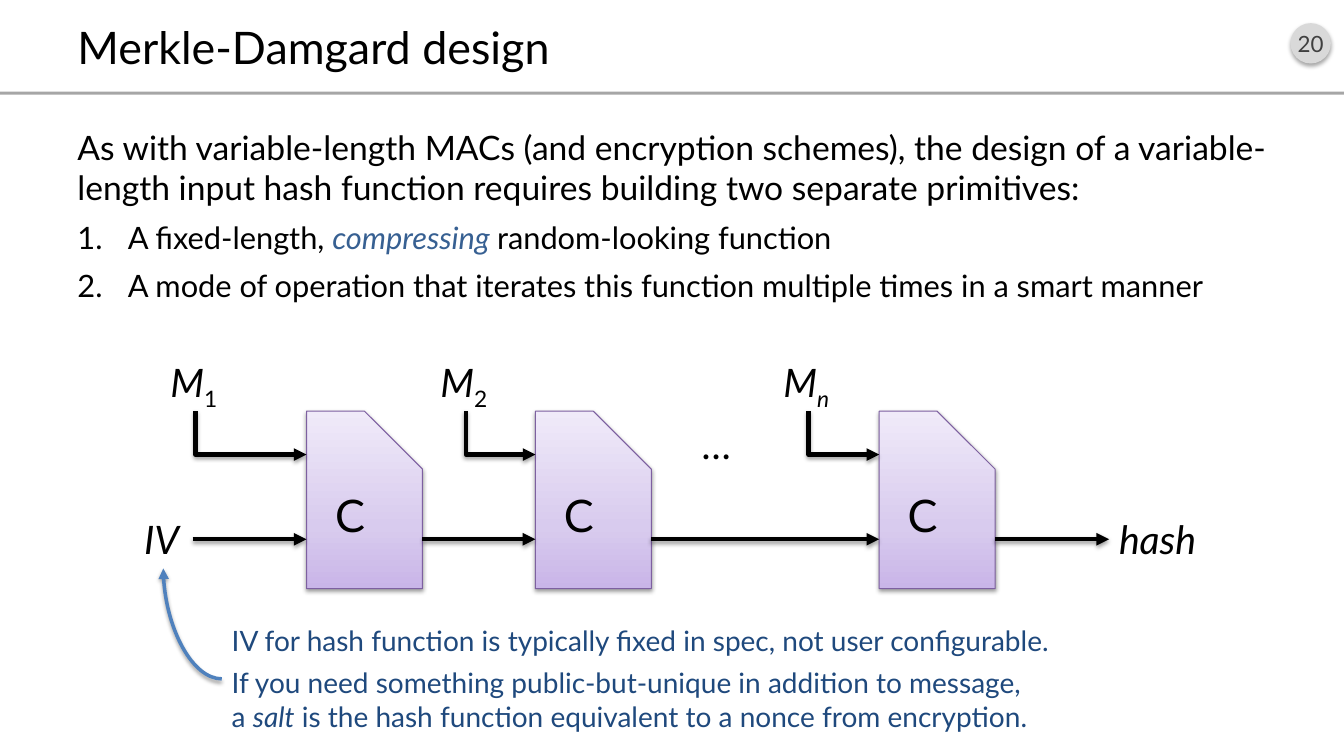
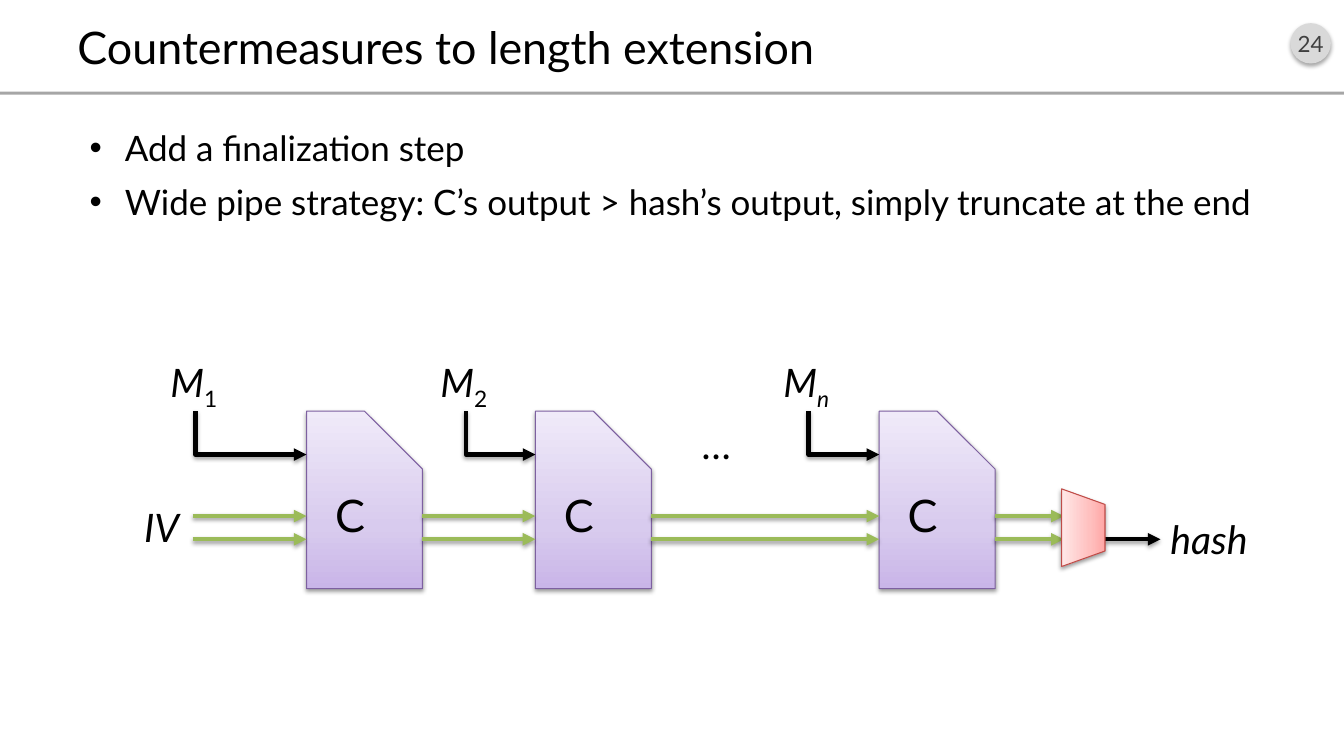
from lxml.etree import SubElement
from pptx import Presentation
from pptx.dml.color import RGBColor
from pptx.enum.shapes import MSO_CONNECTOR, MSO_SHAPE
from pptx.enum.text import MSO_ANCHOR, PP_ALIGN
from pptx.oxml.ns import qn
from pptx.util import Inches, Pt

COLORS = {
    "black": "000000", "white": "FFFFFF", "rule": "A6A6A6", "badge": "D9D9D9",
    "number": "404040", "accent": "376092", "note": "1F497D", "curve": "4F81BD",
    "wide": "9BBB59", "cell": "7D60A0", "cut": "BF4C48",
}
FADES = {
    "cell": ["C9B5E8", "D8CBEE", "F0EAF9"],
    "cut": ["FFA6A5", "FFC0BF", "FFE7E7"],
}
FONT = "Lato"
STOPS = [0, 35, 100]
CELLS = [3.04, 5.31, 8.72]
CELL_W, CELL_H, CELL_TOP = 1.15, 1.76, 4.08
LABEL_H = 0.58
PIPE_Y, WIDE_Y, FEED_Y = 5.35, 5.12, 4.51
IV_X, IV_W = 1.33, 0.58


def rgb(name):
    return RGBColor.from_string(COLORS[name])


def node(parent, tag, **attrs):
    return SubElement(parent, qn(tag), {k: str(v) for k, v in attrs.items()})


def shade(shape, alpha=38, dist=1.6):
    """Give a shape or connector a soft shadow straight below it."""
    effects = node(shape._element.spPr, "a:effectLst")
    drop = node(effects, "a:outerShdw", blurRad=Pt(3.1), dist=Pt(dist),
                dir=5400000, rotWithShape=0)
    node(node(drop, "a:srgbClr", val=COLORS["black"]), "a:alpha", val=alpha * 1000)


def fade(shape, name):
    """Fill from bottom to top with three stops, and outline to match."""
    shape.fill.gradient()
    grad = shape._element.spPr.find(qn("a:gradFill"))
    for child in list(grad):
        grad.remove(child)
    grad.set("rotWithShape", "1")
    stops = node(grad, "a:gsLst")
    for pos, color in zip(STOPS, FADES[name]):
        node(node(stops, "a:gs", pos=pos * 1000), "a:srgbClr", val=color)
    node(grad, "a:lin", ang=16200000, scaled=0)
    shape.line.color.rgb = rgb(name)
    shape.line.width = Pt(0.75)
    shade(shape)


def text(frame, parts, size=28, color="black", italic=False, align=None,
         before=0, bullet=None, left=0, hang=0):
    """Add a paragraph; parts is a string or a list of (string, overrides)."""
    para = frame.paragraphs[0]
    if para.runs:
        para = frame.add_paragraph()
    para.alignment = align
    para.space_before = Pt(before)
    if bullet:
        props = para._p.get_or_add_pPr()
        props.set("marL", str(Inches(left)))
        props.set("indent", str(-Inches(hang)))
        if bullet == "1.":
            node(props, "a:buFont", typeface="+mj-lt")
            node(props, "a:buAutoNum", type="arabicPeriod")
        else:
            node(props, "a:buFont", typeface="Arial")
            node(props, "a:buChar", char=bullet)
    if isinstance(parts, str):
        parts = [(parts, {})]
    for words, extra in parts:
        for i, line in enumerate(words.split("\n")):
            if i:
                para.add_line_break()
            run = para.add_run()
            run.text = line
            font = run.font
            font.name, font.size = FONT, Pt(size)
            font.italic = extra.get("italic", italic)
            font.color.rgb = rgb(extra.get("color", color))
            if "base" in extra:
                run._r.get_or_add_rPr().set("baseline", str(extra["base"] * 1000))


def area(slide, x, y, w, h):
    box = slide.shapes.add_textbox(Inches(x), Inches(y), Inches(w), Inches(h))
    box.text_frame.word_wrap = True
    return box


def label(slide, x, y, w, parts):
    box = area(slide, x, y, w, LABEL_H)
    text(box.text_frame, parts, italic=True)
    return box


def block(slide, kind, x, y, w, h):
    shape = slide.shapes.add_shape(kind, Inches(x), Inches(y), Inches(w), Inches(h))
    shape.shadow.inherit = False
    shape._element.spPr.remove(shape._element.spPr.find(qn("a:effectLst")))
    return shape


def arrow(slide, x1, y1, x2, y2, color="black", width=3,
          kind=MSO_CONNECTOR.STRAIGHT, preset=None):
    line = slide.shapes.add_connector(
        kind, Inches(x1), Inches(y1), Inches(x2), Inches(y2))
    line.line.color.rgb = rgb(color)
    line.line.width = Pt(width)
    node(line.line._get_or_add_ln(), "a:tailEnd", type="triangle")
    if preset:
        line._element.spPr.find(qn("a:prstGeom")).set("prst", preset)
    shade(line)
    return line


def elbow(slide, x1, y1, x2, y2):
    """Draw an arrow that goes down and then right."""
    midx, midy = (x1 + x2) / 2, (y1 + y2) / 2
    dx, dy = (y2 - y1) / 2, (x2 - x1) / 2
    line = arrow(slide, midx - dx, midy - dy, midx + dx, midy + dy,
                 kind=MSO_CONNECTOR.ELBOW, preset="bentConnector2")
    frame = line._element.spPr.find(qn("a:xfrm"))
    frame.set("rot", "16200000")
    frame.set("flipH", "1")


def page(deck, title, number):
    """Add a slide with its title, rule and number badge."""
    slide = deck.slides.add_slide(deck.slide_layouts[6])
    badge = block(slide, MSO_SHAPE.OVAL, 12.8, 0.23, 0.4, 0.4)
    rule = block(slide, MSO_SHAPE.RECTANGLE, 0, 0.91, 13.33, 0.03)
    for shape, name in ((badge, "badge"), (rule, "rule")):
        shape.fill.solid()
        shape.fill.fore_color.rgb = rgb(name)
        shape.line.fill.background()
    rule.shadow.inherit = False
    shade(badge, alpha=35, dist=1.8)
    frame = badge.text_frame
    frame.margin_left = frame.margin_right = 0
    frame.vertical_anchor = MSO_ANCHOR.MIDDLE
    text(frame, str(number), size=16, color="number", align=PP_ALIGN.CENTER)
    head = area(slide, 0.67, 0.16, 12, 0.6).text_frame
    head.vertical_anchor = MSO_ANCHOR.MIDDLE
    text(head, title, size=32)
    return slide


def body(slide):
    return area(slide, 0.67, 1.21, 12, 5.75).text_frame


def chain(slide, rows, color, tip):
    """Draw the cells, inputs and pipes; return the IV label and last pipe."""
    for x, start, sub, slant in zip(CELLS, [1.59, 4.27, 7.67], "12n",
                                    [False, False, True]):
        cell = block(slide, MSO_SHAPE.SNIP_1_RECTANGLE, x, CELL_TOP, CELL_W, CELL_H)
        cell.adjustments[0] = 0.5
        fade(cell, "cell")
        cell.text_frame.vertical_anchor = MSO_ANCHOR.MIDDLE
        text(cell.text_frame, "C", size=32, align=PP_ALIGN.CENTER)
        label(slide, start, CELL_TOP - LABEL_H + 0.01, 0.71,
              [("M", {}), (sub, {"italic": slant, "base": -25})])
        elbow(slide, start + 0.35, CELL_TOP, x, FEED_Y)
    label(slide, 6.87, 4.12, 0.71, "…")
    mid = sum(rows) / len(rows)
    seed = label(slide, IV_X, mid - LABEL_H / 2, IV_W, "IV")
    starts = [IV_X + IV_W] + [x + CELL_W for x in CELLS]
    for y in rows:
        pipes = [arrow(slide, a, y, b, y, color)
                 for a, b in zip(starts, CELLS + [tip])]
        if y == mid:
            pipes[0].begin_connect(seed, 3)
    return seed, pipes[-1]


def result(slide, x, pipe):
    pipe.end_connect(label(slide, x, PIPE_Y - LABEL_H / 2, 1.01, "hash"), 1)


def design(deck):
    slide = page(deck, "Merkle-Damgard design", 20)
    frame = body(slide)
    text(frame, "As with variable-length MACs (and encryption schemes), the design "
         "of a variable-length input hash function requires building two separate "
         "primitives:", size=24, before=8)
    steps = [
        [("A fixed-length, ", {}),
         ("compressing ", {"color": "accent", "italic": True}),
         ("random-looking function", {})],
        "A mode of operation that iterates this function multiple times "
        "in a smart manner",
    ]
    for step in steps:
        text(frame, step, size=22, before=8, bullet="1.", left=0.5, hang=0.5)
    seed, last = chain(slide, [PIPE_Y], "black", 11)
    result(slide, 11, last)

    note = area(slide, 2.2, 6.14, 8.44, 1.19)
    text(note.text_frame, "IV for hash function is typically fixed in spec, "
         "not user configurable.", size=20, color="note")
    text(note.text_frame, [
        ("If you need something public-but-unique in addition to message,\na ", {}),
        ("salt", {"italic": True}),
        (" is the hash function equivalent to a nonce from encryption.", {}),
    ], size=20, color="note", before=6)
    curve = arrow(slide, 2.2, 6.74, 1.62, 5.64, "curve", 2.5,
                  MSO_CONNECTOR.CURVE, "curvedConnector2")
    curve.begin_connect(note, 1)
    curve.end_connect(seed, 2)


def counter(deck):
    slide = page(deck, "Countermeasures to length extension", 24)
    frame = body(slide)
    for item in ("Add a finalization step",
                 "Wide pipe strategy: C’s output > hash’s output, "
                 "simply truncate at the end"):
        text(frame, item, size=25, before=8, bullet="•", left=0.47, hang=0.35)
    chain(slide, [WIDE_Y, PIPE_Y], "wide", 10.55)
    result(slide, 11.51, arrow(slide, 10.96, PIPE_Y, 11.51, PIPE_Y))
    cut = block(slide, MSO_SHAPE.FLOWCHART_MANUAL_OPERATION, 10.36, 5.02, 0.77, 0.43)
    cut.rotation = 270
    fade(cut, "cut")


def main():
    deck = Presentation()
    deck.slide_width, deck.slide_height = Inches(13.33), Inches(7.5)
    design(deck)
    counter(deck)
    deck.save("out.pptx")


if __name__ == "__main__":
    main()
